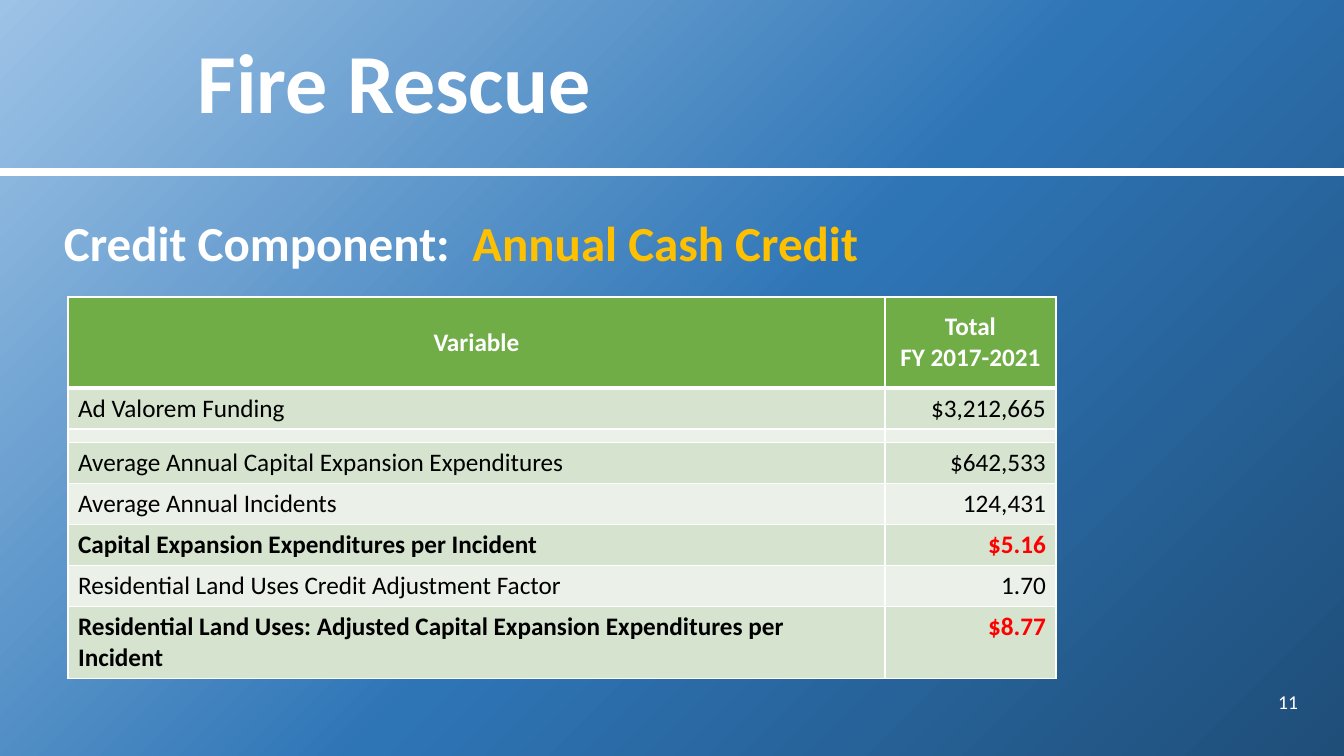
from lxml import etree
from pptx import Presentation
from pptx import util as u
from pptx.dml.color import RGBColor
from pptx.enum import shapes, text
from pptx.oxml import parse_xml
from pptx.oxml.ns import nsdecls, qn

HUES = {
    "white": "FFFFFF", "black": "000000", "gold": "FFC000", "red": "FF0000",
    "head": "70AD47", "band": "D5E3CF", "pale": "EBF1E9", "sky": "9DC3E6",
    "blue": "2E75B6", "navy": "1F4E79", "shade": "000000",
}
LEFT, RIGHT, MID = text.PP_ALIGN.LEFT, text.PP_ALIGN.RIGHT, text.PP_ALIGN.CENTER
TOP, CENTER = text.MSO_ANCHOR.TOP, text.MSO_ANCHOR.MIDDLE
TINY = 2


def px(n):
    return u.Emu(round(n * 914400 / 100.8))


class Deck:
    """Holds the style and the current slide."""

    def __init__(self, font):
        self.font = font
        self.prs = Presentation()
        self.prs.slide_width, self.prs.slide_height = px(1344), px(756)
        self.slide = self.prs.slides.add_slide(self.prs.slide_layouts[6])

    def glow(self, stops):
        """Fill the background with a gradient spreading from the top left."""
        self.slide.background.fill.gradient()
        old = self.slide.element.find(".//" + qn("a:gradFill"))
        marks = "".join(
            f'<a:gs pos="{pos * 1000}"><a:srgbClr val="{HUES[hue]}"/></a:gs>'
            for pos, hue in stops)
        old.getparent().replace(old, parse_xml(
            f'<a:gradFill {nsdecls("a")} rotWithShape="1"><a:gsLst>{marks}</a:gsLst>'
            '<a:path path="circle"><a:fillToRect r="100000" b="100000"/></a:path>'
            '</a:gradFill>'))

    def rule(self, x1, x2, y, width, hue):
        line = self.slide.shapes.add_connector(
            shapes.MSO_CONNECTOR.STRAIGHT, px(x1), px(y), px(x2), px(y))
        line.line.color.rgb = RGBColor.from_string(HUES[hue])
        line.line.width = u.Pt(width)
        etree.SubElement(line.element.spPr, qn("a:effectLst"))

    def style(self, run, size, hue, bold):
        run.font.name, run.font.size, run.font.bold = self.font, u.Pt(size), bold
        run.font.color.rgb = RGBColor.from_string(HUES[hue])

    def label(self, box, parts, size, bold=False, align=LEFT, anchor=TOP, space=1.0):
        """Add a one-line text box; parts are (words, hue) pairs."""
        frame = self.slide.shapes.add_textbox(*map(px, box)).text_frame
        frame.word_wrap, frame.vertical_anchor = True, anchor
        para = frame.paragraphs[0]
        para.alignment, para.line_spacing = align, space
        for words, hue in parts:
            run = para.add_run()
            run.text = words
            self.style(run, size, hue, bold)
        return para

    def shade(self, para):
        """Cast a soft shadow behind the words."""
        for run in para.runs:
            run.font.fill.fore_color  # the fill comes before the effect
            run.font._element.find(qn("a:solidFill")).addnext(parse_xml(
                f'<a:effectLst {nsdecls("a")}><a:outerShdw blurRad="38100" '
                'dist="38100" dir="2700000" algn="tl">'
                f'<a:srgbClr val="{HUES["shade"]}"><a:alpha val="43000"/></a:srgbClr>'
                '</a:outerShdw></a:effectLst>'))

    def edge(self, cell, widths):
        props = cell._tc.get_or_add_tcPr()
        for side, width in zip("LRTB", widths):
            props.append(parse_xml(
                f'<a:ln{side} {nsdecls("a")} w="{u.Pt(width)}"><a:solidFill>'
                f'<a:srgbClr val="{HUES["white"]}"/></a:solidFill></a:ln{side}>'))

    def cell(self, cell, words, fill, hue, bold, align, anchor, widths):
        self.edge(cell, widths)
        cell.fill.solid()
        cell.fill.fore_color.rgb = RGBColor.from_string(HUES[fill])
        cell.vertical_anchor = anchor
        cell.text_frame.text = words
        for para in cell.text_frame.paragraphs:
            para.alignment = align
            for run in para.runs:
                self.style(run, 18, hue, bold)
            if not words:
                end = etree.SubElement(para._p, qn("a:endParaRPr"))
                end.set("sz", str(TINY * 100))

    def table(self, x, y, cols, rows):
        """Draw rows of (height, name, value, bold); the first is the heading."""
        high = sum(row[0] for row in rows)
        grid = self.slide.shapes.add_table(
            len(rows), len(cols), px(x), px(y), px(sum(cols)), px(high)).table
        for col, width in zip(grid.columns, cols):
            col.width = px(width)
        for i, (height, name, value, bold) in enumerate(rows):
            grid.rows[i].height = px(height)
            widths = (1, 1, 3 if i == 1 else 1, 3 if i == 0 else 1)
            for j, words in enumerate((name, value)):
                if i == 0:
                    look = "head", "white", True, MID, CENTER
                else:
                    look = ("band" if i % 2 else "pale",
                            "red" if bold and j else "black",
                            bold, RIGHT if j else LEFT, TOP)
                self.cell(grid.cell(i, j), words, *look, widths)


def main():
    deck = Deck("Calibri")
    deck.glow([(0, "sky"), (53, "blue"), (100, "navy")])
    deck.rule(-2, 1344, 172, 6, "white")
    title = deck.label((188, 0, 1119, 172), [("Fire Rescue", "white")], 60,
                       bold=True, anchor=CENTER, space=0.9)
    deck.shade(title)
    deck.label((1218, 682, 90, 40), [("11", "white")], 14, align=RIGHT, anchor=CENTER)
    deck.label((54, 196, 1252, 531),
               [("Credit Component:  ", "white"), ("Annual Cash Credit", "gold")],
               35, bold=True, space=1.2)
    deck.table(68, 297, (817, 171), [
        (91, "Variable", "Total\nFY 2017-2021", True),
        (41, "Ad Valorem Funding", "$3,212,665", False),
        (13, "", "", False),
        (41, "Average Annual Capital Expansion Expenditures", "$642,533", False),
        (41, "Average Annual Incidents", "124,431", False),
        (41, "Capital Expansion Expenditures per Incident", "$5.16", True),
        (41, "Residential Land Uses Credit Adjustment Factor", "1.70", False),
        (72, "Residential Land Uses: Adjusted Capital Expansion Expenditures per Incident",
         "$8.77", True),
    ])
    deck.prs.save("out.pptx")


if __name__ == "__main__":
    main()
